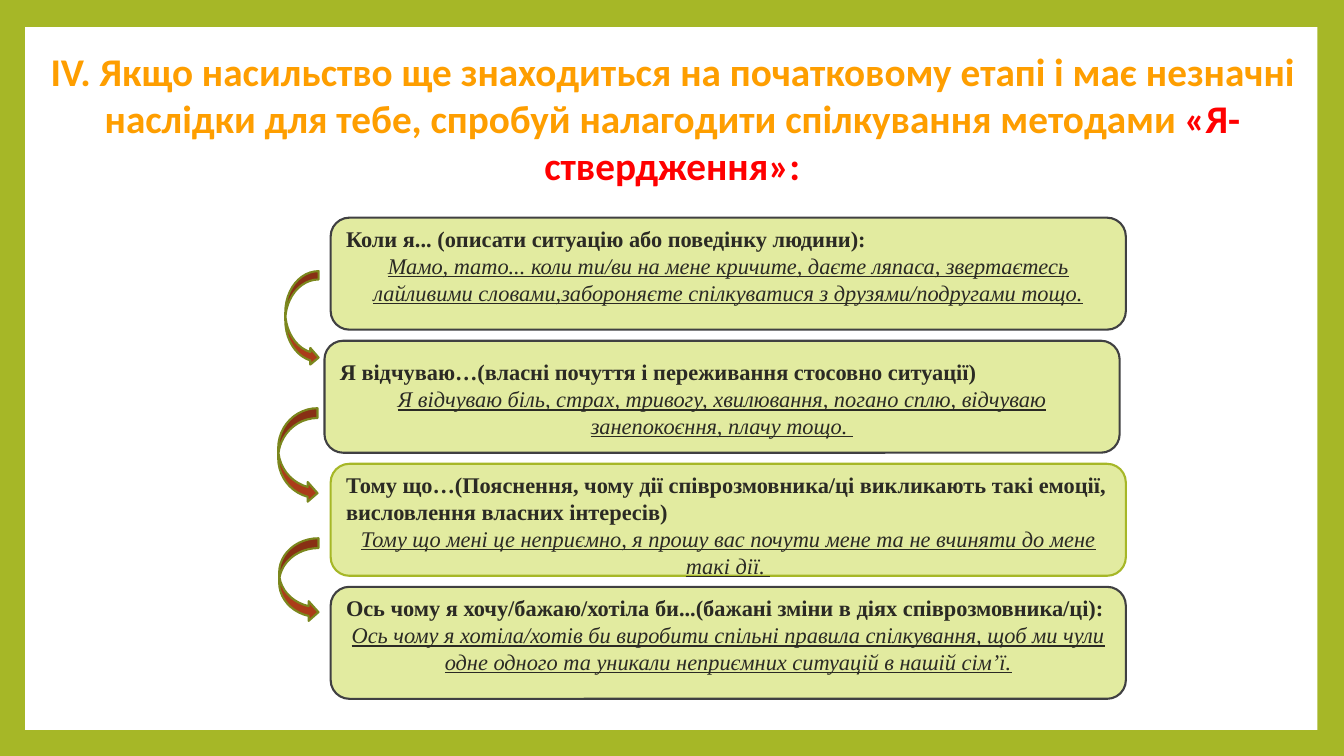
from pptx import Presentation
from pptx.dml.color import RGBColor
from pptx.enum.shapes import MSO_SHAPE
from pptx.enum.text import MSO_ANCHOR, MSO_AUTO_SIZE, PP_ALIGN
from pptx.util import Pt

RECT, ROUNDED = MSO_SHAPE.RECTANGLE, MSO_SHAPE.ROUNDED_RECTANGLE
CURVED_ARROW = MSO_SHAPE.CURVED_RIGHT_ARROW
TOP = MSO_ANCHOR.TOP
LEFT, CENTER = PP_ALIGN.LEFT, PP_ALIGN.CENTER

# Content
TITLE = [
    ("ІV. Якщо насильство ще знаходиться на початковому етапі і має незначні "
     "наслідки для тебе, спробуй налагодити спілкування методами ", "title"),
    ("«Я-ствердження»:", "accent"),
]
# heading, example, left edge, space above the text, outline colour
STEPS = [
    ("Коли я... (описати ситуацію або поведінку людини):",
     "Мамо, тато... коли ти/ви на мене кричите, даєте ляпаса, звертаєтесь "
     "лайливими словами,забороняєте спілкуватися з друзями/подругами тощо.",
     236.2, 1.3, "outline"),
    ("Я відчуваю…(власні почуття і переживання стосовно ситуації)",
     "Я відчуваю біль, страх, тривогу, хвилювання, погано сплю, відчуваю "
     "занепокоєння, плачу тощо. ",
     231.8, 8.6, "outline"),
    ("Тому що…(Пояснення, чому дії співрозмовника/ці викликають такі емоції, "
     "висловлення власних інтересів)",
     "Тому що мені це неприємно, я прошу вас почути мене та не вчиняти до мене "
     "такі дії. ",
     236.2, 1.3, "green"),
    ("Ось чому я хочу/бажаю/хотіла би...(бажані зміни в діях співрозмовника/ці):",
     "Ось чому я хотіла/хотів би виробити спільні правила спілкування, щоб ми чули "
     "одне одного та уникали неприємних ситуацій в нашій сім’ї.",
     236.2, 1.3, "outline"),
]
# left, top, width, height
ARROWS = [(203.8, 193.7, 23.8, 67.7), (198.7, 291.6, 28.1, 67.7),
          (199.4, 384.5, 28.1, 59.8)]
STEP_TOP, STEP_PITCH, STEP_W, STEP_H = 155.5, 87.9, 568, 80

THEME = {
    "green": "A6B727", "panel": "FFFFFF", "title": "FE9E00", "accent": "FF0000",
    "step": "E2EBA0", "outline": "404042", "text": "2B2A24",
    "arrow": "AB3C19", "arrow_line": "7B871D",
    "title_font": "Calibri", "step_font": "Times New Roman",
    "title_size": 28, "step_size": 16, "line": 1.5,
}


def color(name):
    return RGBColor.from_string(THEME[name])


def add_box(s, kind, box, fill, line=None):
    sp = s.shapes.add_shape(kind, *map(Pt, box))
    sp.shadow.inherit = False
    sp.fill.solid()
    sp.fill.fore_color.rgb = color(fill)
    if line:
        sp.line.color.rgb = color(line)
        sp.line.width = Pt(THEME["line"])
    else:
        sp.line.fill.background()
    return sp


def add_run(p, text, role, ink, bold=True):
    r = p.add_run()
    r.text = text
    r.font.name = THEME[role + "_font"]
    r.font.size = Pt(THEME[role + "_size"])
    r.font.color.rgb = color(ink)
    r.font.bold = bold
    r.font.italic = r.font.underline = not bold


prs = Presentation()
prs.slide_width, prs.slide_height = Pt(960), Pt(540)
s = prs.slides.add_slide(prs.slide_layouts[5])

# Green frame around a white panel, which lies behind the title
s.background.fill.solid()
s.background.fill.fore_color.rgb = color("green")
panel = add_box(s, RECT, (18, 19.4, 923, 502), "panel")
s.shapes._spTree.insert(2, panel._element)

# Title
title = s.shapes.title
title.left, title.top, title.width, title.height = map(Pt, (21.6, 30.2, 917.3, 147.6))
tf = title.text_frame
tf.word_wrap = True
tf.auto_size = MSO_AUTO_SIZE.NONE
tf.vertical_anchor = TOP
tf.paragraphs[0].alignment = CENTER
for text, ink in TITLE:
    add_run(tf.paragraphs[0], text, "title", ink)

# Four steps, evenly spaced
for i, (heading, example, left, space, outline) in enumerate(STEPS):
    box = (left, STEP_TOP + i * STEP_PITCH, STEP_W, STEP_H)
    tf = add_box(s, ROUNDED, box, "step", outline).text_frame
    tf.word_wrap = True
    tf.vertical_anchor = TOP
    tf.margin_top, tf.margin_bottom = Pt(space), Pt(0)
    p = tf.paragraphs[0]
    p.alignment = LEFT
    add_run(p, heading, "step", "text")
    p = tf.add_paragraph()
    p.alignment = CENTER
    add_run(p, example, "step", "text", bold=False)

# Arrows from each step to the next
for box in ARROWS:
    add_box(s, CURVED_ARROW, box, "arrow", "arrow_line")

prs.save("out.pptx")
